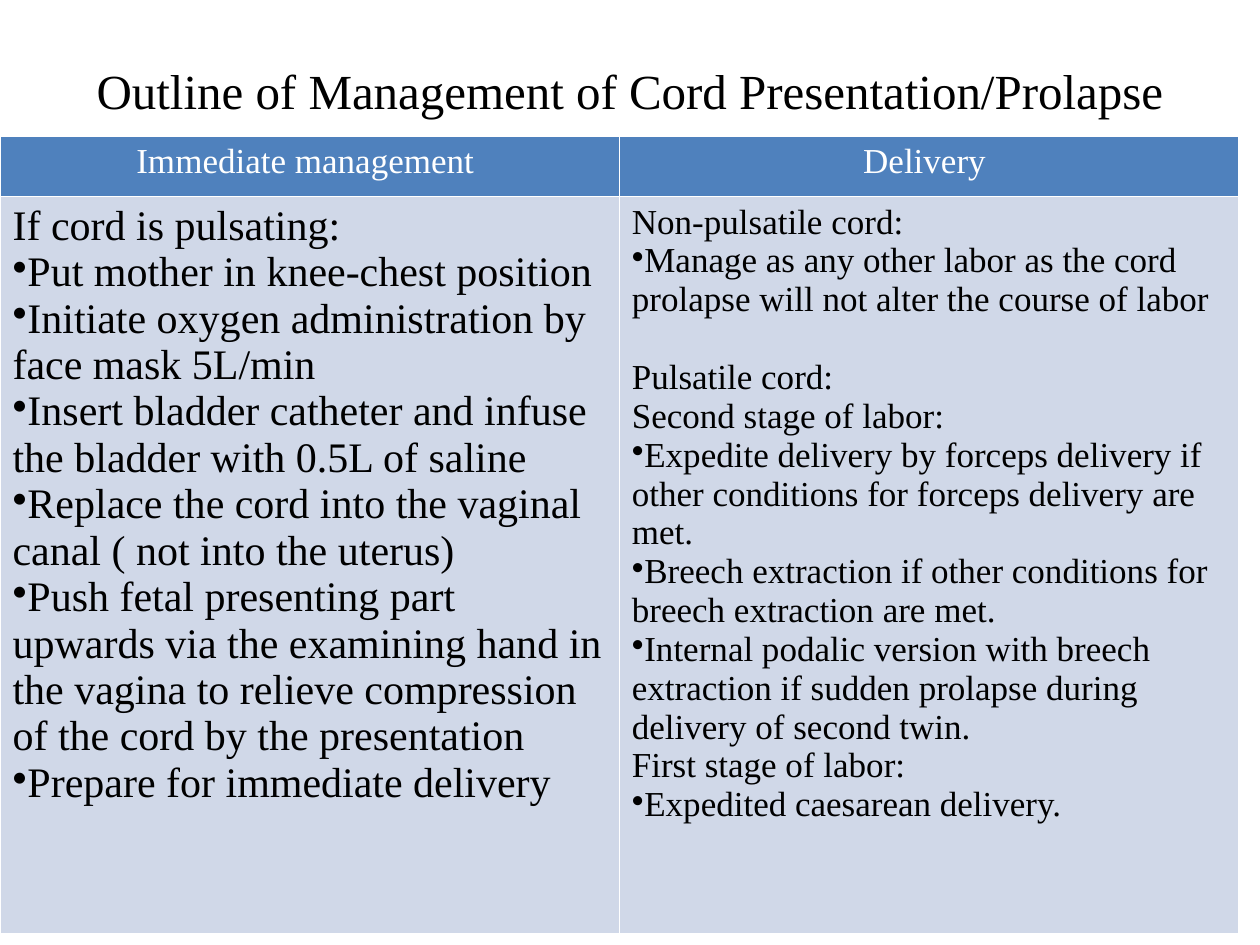
from dataclasses import dataclass

import lxml.etree
import pptx
import pptx.dml.color
import pptx.enum.text
import pptx.oxml.ns
import pptx.table
import pptx.text.text
import pptx.util

Inches = pptx.util.Inches
Pt = pptx.util.Pt
RGB = pptx.dml.color.RGBColor
CENTER = pptx.enum.text.PP_ALIGN.CENTER
LEFT = pptx.enum.text.PP_ALIGN.LEFT


@dataclass(frozen=True)
class Theme:
    font: str = "Times New Roman"
    ink: RGB = RGB(0, 0, 0)
    white: RGB = RGB(255, 255, 255)
    header_fill: RGB = RGB(0x4F, 0x81, 0xBD)
    body_fill: RGB = RGB(0xD0, 0xD8, 0xE8)
    title_size: int = 28
    header_size: int = 20
    border_width: int = 1


@dataclass(frozen=True)
class Line:
    text: str
    bullet: bool = False
    space_before: float = 0


@dataclass(frozen=True)
class Column:
    heading: str
    size: int
    lines: tuple[Line, ...]


THEME = Theme()
COLUMNS = (
    Column("Immediate management ", 24, (
        Line("If cord is pulsating:"),
        Line("Put mother in knee-chest position", True),
        Line("Initiate oxygen administration by face mask 5L/min", True),
        Line("Insert bladder catheter and infuse the bladder with 0.5L of saline", True),
        Line("Replace the cord into the vaginal canal ( not into the uterus)", True),
        Line("Push fetal presenting part upwards via the examining hand in the vagina "
             "to relieve compression of the cord by the presentation", True),
        Line("Prepare for immediate delivery", True),
    )),
    Column("Delivery ", 20, (
        Line("Non-pulsatile cord:"),
        Line("Manage as any other labor as the cord prolapse will not alter "
             "the course of labor", True),
        Line("Pulsatile cord:", space_before=22.2),
        Line("Second stage of labor:"),
        Line("Expedite delivery by forceps delivery if other conditions for "
             "forceps delivery are met.", True),
        Line("Breech extraction if other conditions for breech extraction are met.", True),
        Line("Internal podalic version with breech extraction if sudden prolapse "
             "during delivery of second twin.", True),
        Line("First stage of labor:"),
        Line("Expedited caesarean delivery.", True),
    )),
)


def add_bullet(paragraph: pptx.text.text._Paragraph) -> None:
    properties = paragraph._p.get_or_add_pPr()
    properties.set("marL", "0")
    properties.set("indent", "0")
    bullet = lxml.etree.SubElement(properties, pptx.oxml.ns.qn("a:buChar"))
    bullet.set("char", "•")


def write_lines(frame: pptx.text.text.TextFrame, lines: tuple[Line, ...],
                size: int, color: RGB, alignment: int) -> None:
    frame.text = "\n".join(line.text for line in lines)
    for line, paragraph in zip(lines, frame.paragraphs):
        paragraph.alignment = alignment
        if line.space_before:
            paragraph.space_before = Pt(line.space_before)
        if line.bullet:
            add_bullet(paragraph)
        for run in paragraph.runs:
            run.font.name = THEME.font
            run.font.size = Pt(size)
            run.font.color.rgb = color


def style_cell(cell: pptx.table._Cell, color: RGB) -> None:
    cell.fill.solid()
    cell.fill.fore_color.rgb = color
    properties = cell._tc.get_or_add_tcPr()
    for position, side in enumerate(("lnL", "lnR", "lnT", "lnB")):
        border = lxml.etree.Element(pptx.oxml.ns.qn(f"a:{side}"))
        border.set("w", str(Pt(THEME.border_width)))
        fill = lxml.etree.SubElement(border, pptx.oxml.ns.qn("a:solidFill"))
        lxml.etree.SubElement(fill, pptx.oxml.ns.qn("a:srgbClr")).set("val", str(THEME.white))
        properties.insert(position, border)


def main() -> None:
    deck = pptx.Presentation()
    deck.slide_width, deck.slide_height = Inches(10), Inches(7.5)
    slide = deck.slides.add_slide(deck.slide_layouts[6])

    title = slide.shapes.add_textbox(Inches(0.5), Inches(0.3), Inches(9), Inches(1.25)).text_frame
    title.word_wrap = True
    title.vertical_anchor = pptx.enum.text.MSO_ANCHOR.MIDDLE
    title.margin_bottom = Inches(0.47)
    write_lines(title, (Line("Outline of Management of Cord Presentation/Prolapse"),),
                THEME.title_size, THEME.ink, CENTER)

    management = slide.shapes.add_table(
        2, len(COLUMNS), Inches(0), Inches(1.08), Inches(9.83), Inches(6.33)).table
    management.rows[0].height = Inches(0.48)
    management.rows[1].height = Inches(5.85)
    for index, column in enumerate(COLUMNS):
        heading, body = management.cell(0, index), management.cell(1, index)
        write_lines(heading.text_frame, (Line(column.heading),),
                    THEME.header_size, THEME.white, CENTER)
        write_lines(body.text_frame, column.lines, column.size, THEME.ink, LEFT)
        for run in heading.text_frame.paragraphs[0].runs:
            run.font.bold = False
        style_cell(heading, THEME.header_fill)
        style_cell(body, THEME.body_fill)

    deck.save("out.pptx")


if __name__ == "__main__":
    main()
